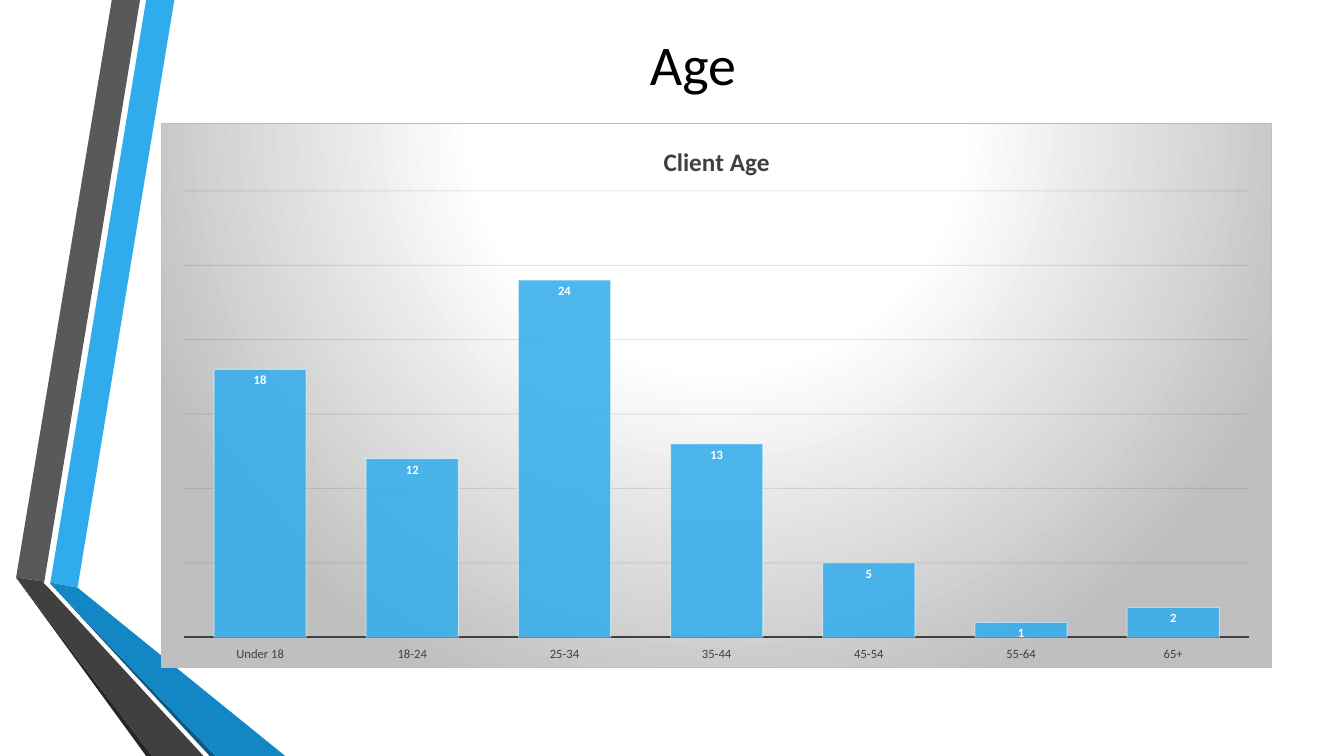
from dataclasses import dataclass

from lxml import etree
from pptx import Presentation
from pptx.chart.data import CategoryChartData
from pptx.dml.color import RGBColor
from pptx.enum.chart import XL_CHART_TYPE, XL_LABEL_POSITION, XL_TICK_LABEL_POSITION, XL_TICK_MARK
from pptx.enum.text import MSO_ANCHOR, PP_ALIGN
from pptx.oxml import parse_xml
from pptx.oxml.ns import nsdecls, qn
from pptx.util import Inches, Pt

COLUMN_CLUSTERED = XL_CHART_TYPE.COLUMN_CLUSTERED
INSIDE_END = XL_LABEL_POSITION.INSIDE_END
LABELS_LOW = XL_TICK_LABEL_POSITION.LOW
NO_TICK = XL_TICK_MARK.NONE
MIDDLE = MSO_ANCHOR.MIDDLE
CENTER = PP_ALIGN.CENTER


@dataclass(frozen=True)
class Theme:
    font: str = "Calibri"
    black: str = "000000"
    white: str = "FFFFFF"
    blue: str = "30ACEC"
    blue_dark: str = "1287C3"
    blue_edge: str = "0C5A82"
    gray: str = "595959"
    gray_dark: str = "404040"
    gray_edge: str = "262626"
    gray_light: str = "BFBFBF"
    grid: str = "0D0D0D"
    title_size: float = 40
    chart_title_size: float = 18
    chart_size: float = 10
    label_size: float = 9
    thin: float = 0.75
    axis_width: float = 1.5


theme = Theme()


def style_font(font, size, color, bold=False):
    font.name = theme.font
    font.size = Pt(size)
    font.bold = bold
    font.color.rgb = RGBColor.from_string(color)


def set_opacity(element, percent):
    color = element.find(".//" + qn("a:srgbClr"))
    etree.SubElement(color, qn("a:alpha"), val=str(percent * 1000))


presentation = Presentation()
presentation.slide_width = Inches(13.333)
presentation.slide_height = Inches(7.5)
slide = presentation.slides.add_slide(presentation.slide_layouts[5])

ribbons = [
    (theme.blue, [(50, 578), (77, 583), (173, 0), (145, 0)]),
    (theme.gray, [(139, 0), (111, 0), (16, 573), (44, 577)]),
    (theme.gray_edge, [(16, 573), (145, 750), (151, 750)]),
    (theme.blue_edge, [(50, 579), (208, 750), (214, 750)]),
    (theme.blue_dark, [(50, 579), (214, 750), (283, 750), (77, 583), (50, 578)]),
    (theme.gray_dark, [(202, 750), (48, 583), (43, 578), (44, 577), (16, 573), (151, 750)]),
]
for color, points in ribbons:
    builder = slide.shapes.build_freeform(*points[0], scale=Inches(0.01))
    builder.add_line_segments(points[1:], close=True)
    ribbon = builder.convert_to_shape()
    ribbon.shadow.inherit = False
    ribbon.fill.solid()
    ribbon.fill.fore_color.rgb = RGBColor.from_string(color)
    ribbon.line.fill.background()

title = slide.shapes.title
title.left, title.top, title.width, title.height = map(Inches, (1.13, 0.04, 11.49, 1.18))
title.text_frame.text = "Age"
title.text_frame.vertical_anchor = MIDDLE
paragraph = title.text_frame.paragraphs[0]
paragraph.alignment = CENTER
style_font(paragraph.font, theme.title_size, theme.black)

chart_data = CategoryChartData()
chart_data.categories = ["Under 18", "18-24", "25-34", "35-44", "45-54", "55-64", "65+"]
chart_data.add_series("Series 1", [18, 12, 24, 13, 5, 1, 2])
chart_box = map(Inches, (1.6, 1.22, 11.02, 5.41))
chart = slide.shapes.add_chart(COLUMN_CLUSTERED, *chart_box, chart_data).chart
style_font(chart.font, theme.chart_size, theme.black)
chart.has_legend = False
chart.has_title = True
chart.chart_title.include_in_layout = False
chart.chart_title.text_frame.text = "Client Age"
chart_title = chart.chart_title.text_frame.paragraphs[0]
style_font(chart_title.font, theme.chart_title_size, theme.gray_dark, bold=True)

category_axis = chart.category_axis
category_axis.major_tick_mark = NO_TICK
category_axis.minor_tick_mark = NO_TICK
category_axis.tick_label_position = LABELS_LOW
category_axis.format.line.color.rgb = RGBColor.from_string(theme.gray_dark)
category_axis.format.line.width = Pt(theme.axis_width)
style_font(category_axis.tick_labels.font, theme.label_size, theme.gray_dark)

value_axis = chart.value_axis
value_axis.visible = False
value_axis.minimum_scale = 0
value_axis.maximum_scale = 30
value_axis.major_unit = 5
value_axis.has_major_gridlines = True
gridline = value_axis.major_gridlines.format.line
gridline.color.rgb = RGBColor.from_string(theme.grid)
gridline.width = Pt(theme.thin)
set_opacity(chart.element.find(".//" + qn("c:majorGridlines")), 10)

plot = chart.plots[0]
plot.gap_width = 65
plot.vary_by_categories = False
series = plot.series[0]
series.format.fill.solid()
series.format.fill.fore_color.rgb = RGBColor.from_string(theme.blue)
series.format.line.color.rgb = RGBColor.from_string(theme.white)
series.format.line.width = Pt(theme.thin)
bar_format = chart.element.find(".//" + qn("c:ser")).find(qn("c:spPr"))
set_opacity(bar_format.find(qn("a:solidFill")), 85)
set_opacity(bar_format.find(qn("a:ln")), 50)

plot.has_data_labels = True
plot.data_labels.show_value = True
plot.data_labels.position = INSIDE_END
style_font(plot.data_labels.font, theme.label_size, theme.white, bold=True)

layout = parse_xml(
    f'<c:layout {nsdecls("c")}><c:manualLayout><c:layoutTarget val="inner"/>'
    '<c:xMode val="edge"/><c:yMode val="edge"/>'
    '<c:x val="0.02"/><c:y val="0.124"/><c:w val="0.96"/><c:h val="0.82"/>'
    '</c:manualLayout></c:layout>'
)
plot_area = chart.element.find(".//" + qn("c:plotArea"))
for old_layout in plot_area.findall(qn("c:layout")):
    plot_area.remove(old_layout)
plot_area.insert(0, layout)

gradient_stops = [(0, theme.white), (39, theme.white), (100, theme.gray_light)]
stops = "".join(
    f'<a:gs pos="{position * 1000}"><a:srgbClr val="{color}"/></a:gs>'
    for position, color in gradient_stops
)
background = parse_xml(
    f'<c:spPr {nsdecls("c", "a")}><a:gradFill><a:gsLst>{stops}</a:gsLst>'
    '<a:path path="circle"><a:fillToRect l="50000" t="-80000" r="50000" b="180000"/></a:path>'
    f'</a:gradFill><a:ln w="{Pt(theme.thin)}"><a:solidFill>'
    f'<a:srgbClr val="{theme.gray_light}"/></a:solidFill></a:ln></c:spPr>'
)
chart.element.find(qn("c:chart")).addnext(background)

presentation.save("out.pptx")
